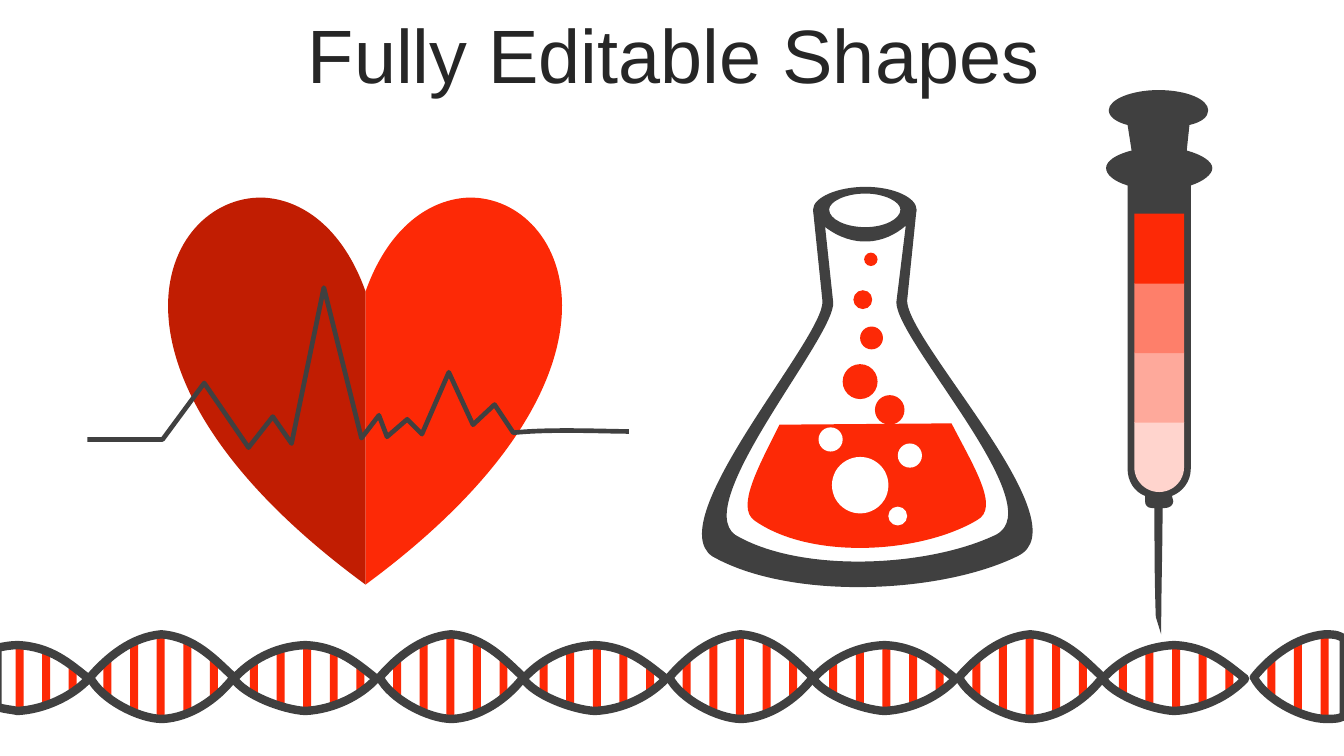
"""Build a slide of editable medical shapes: heart, DNA strand, syringe and flask."""

from dataclasses import dataclass
from typing import NamedTuple

from lxml.etree import SubElement
from pptx import Presentation
from pptx.dml.color import RGBColor
from pptx.enum.shapes import MSO_SHAPE
from pptx.enum.text import MSO_ANCHOR, MSO_AUTO_SIZE, PP_ALIGN
from pptx.oxml.ns import qn
from pptx.shapes.autoshape import Shape
from pptx.shapes.shapetree import GroupShapes, SlideShapes
from pptx.util import Inches, Pt

Shapes = GroupShapes | SlideShapes
Point = tuple[float, float]

SLIDE_WIDTH = Inches(10)
SLIDE_HEIGHT = SLIDE_WIDTH * 9 // 16
COLUMNS = 1000
CELL = SLIDE_WIDTH / COLUMNS
CURVE_STEPS = 16
COMMANDS = {"M": ("a:moveTo", 1), "L": ("a:lnTo", 1), "C": ("a:cubicBezTo", 3), "Z": ("a:close", 0)}


@dataclass(frozen=True)
class Theme:
    ink: str = "404040"
    title: str = "262626"
    red: str = "FD2906"
    dark_red: str = "C11D02"
    white: str = "FFFFFF"
    doses: tuple[str, ...] = ("FD2906", "FE7F6A", "FEA99B", "FFD4CD")
    font: str = "Arial"
    title_size: float = 40.5
    pulse_line: float = 2.5
    strand_line: float = 4.5


class Box(NamedTuple):
    column: float
    row: float
    columns: float
    rows: float


class Circle(NamedTuple):
    column: float
    row: float
    size: float


class Rung(NamedTuple):
    offset: float
    row: float
    rows: float


class Step(NamedTuple):
    command: str
    points: list[Point]


@dataclass(frozen=True)
class Lobe:
    outline: str
    rungs: tuple[Rung, ...]


THEME = Theme()
TITLE_BOX = Box(27, 10, 949, 59)

HEART_LEFT = "M 195 147 C 224 148 255 169 272 217 L 272 435 C 58 278 120 146 195 147 Z"
HEART_RIGHT = "M 349 147 C 320 148 289 169 272 217 L 272 435 C 485 278 423 146 349 147 Z"
PULSE = ("M 65 327 L 121 327 L 152 285 L 185 333 L 203 310 L 217 330 L 241 214 L 269 326 "
         "L 282 309 L 288 325 L 303 312 L 314 323 L 334 277 L 352 316 L 368 301 L 382 322 "
         "C 409 319 451 321 468 321")

RUNG_WIDTH = 6
RUNG_GAP = 19.8
LOBE_PAIRS = 4
PAIR_WIDTH = 215.5
FIRST_WIDE, FIRST_NARROW = 67, 174
LEFT_EDGE, RIGHT_EDGE = -40, 933


def rungs(first: float, spans: list[tuple[float, float]]) -> tuple[Rung, ...]:
    return tuple(Rung(first + i * RUNG_GAP, *span) for i, span in enumerate(spans))


WIDE = Lobe("M 0 504 C 13 489 31 474 53 472 C 78 474 93 491 107 504 "
            "C 94 521 74 534 54 535 C 36 535 8 520 0 504 Z",
            rungs(10, [(491, 28), (477, 51), (472, 61), (477, 55), (490, 28)]))
NARROW = Lobe("M 0 505 C 12 492 30 481 53 480 C 78 481 92 494 106 505 "
              "C 94 518 74 528 53 529 C 36 528 8 517 0 505 Z",
              rungs(12, [(493, 24), (484, 41), (479, 49), (484, 41), (495, 20)]))
LEFT_LOBE = Lobe("M 53 480 C 78 481 92 494 106 505 C 94 518 73 528 53 529 "
                 "C 49 528 44 528 38 526 L 38 482 C 43 481 48 480 53 480 Z", NARROW.rungs[2:])
RIGHT_LOBE = Lobe("M 0 504 C 12 489 31 474 53 472 C 62 472 63 473 67 475 L 67 533 "
                  "C 64 534 64 535 54 535 C 36 535 8 520 0 504 Z", WIDE.rungs[:3])

SYRINGE = (
    "M 862 67 C 842 67 825 74 825 82 C 825 87 831 91 839 93 L 842 112 "
    "C 830 115 823 120 823 125 C 823 130 829 135 839 138 L 839 349 "
    "C 839 358 844 366 852 369 L 852 373 C 852 376 854 378 857 378 L 859 378 "
    "C 859 406 859 431 860 459 L 864 472 C 864 438 865 409 865 378 L 867 378 "
    "C 870 378 873 376 873 373 L 872 369 C 880 366 886 358 886 349 L 886 138 "
    "C 895 135 902 130 902 125 C 902 120 894 115 883 112 L 885 93 "
    "C 894 91 899 87 899 82 C 899 74 883 67 862 67 Z"
)
TOP_DOSE = Box(844, 159, 37, 52)
DOSE_PITCH = 51.7

LIQUID = ("M 580 316 L 708 315 C 725 348 744 378 727 387 C 685 412 603 417 561 387 "
          "C 548 377 564 348 580 316 Z")
FLASK_BODY = (
    "M 674 168 C 658 182 635 185 614 169 L 620 225 C 622 250 514 374 547 398 "
    "C 596 427 691 422 741 398 C 783 377 667 254 667 225 Z "
    "M 605 156 C 637 183 665 171 682 156 L 675 224 C 676 256 807 391 757 414 "
    "C 700 442 588 447 530 414 C 491 387 614 251 612 224 Z"
)
FLASK_RIM = (
    "M 644 144 C 629 144 617 150 617 156 C 617 163 629 169 644 169 "
    "C 658 169 670 163 670 156 C 670 150 658 144 644 144 Z "
    "M 644 139 C 665 139 682 147 682 156 C 682 166 665 174 644 174 "
    "C 623 174 605 166 605 156 C 605 147 623 139 644 139 Z"
)
RISING_BUBBLES = (Circle(651, 294, 22), Circle(627, 271, 26), Circle(640, 243, 17),
                  Circle(635, 216, 14), Circle(643, 188, 10))
LIQUID_BUBBLES = (Circle(619, 340, 42), Circle(668, 330, 18), Circle(609, 318, 18),
                  Circle(661, 377, 14))


def apply(target: object, values: dict[str, object]) -> None:
    for attribute, value in values.items():
        setattr(target, attribute, value)


def paint(shape: Shape, fill: str | None, line: str | None = None, width: float = 0) -> Shape:
    shape.shadow.inherit = False
    for part, color in ((shape.fill, fill), (shape.line.fill, line)):
        if color:
            part.solid()
            part.fore_color.rgb = RGBColor.from_string(color)
        else:
            part.background()
    if line:
        shape.line.width = Pt(width)
    return shape


def read_steps(outline: str, shift: float) -> list[Step]:
    tokens = iter(outline.split())
    return [
        Step(command, [((float(next(tokens)) + shift) * CELL, float(next(tokens)) * CELL)
                       for _ in range(COMMANDS[command][1])])
        for command in tokens
    ]


def bezier(corners: list[Point], share: float) -> Point:
    rest = 1 - share
    weights = (rest**3, 3 * rest**2 * share, 3 * rest * share**2, share**3)
    x, y = (sum(w * v for w, v in zip(weights, axis)) for axis in zip(*corners))
    return x, y


def covered_points(steps: list[Step]) -> list[Point]:
    covered: list[Point] = []
    for command, points in steps:
        if command == "C":
            corners = [covered[-1], *points]
            covered.extend(bezier(corners, i / CURVE_STEPS) for i in range(1, CURVE_STEPS + 1))
        else:
            covered.extend(points)
    return covered


def draw_outline(shapes: Shapes, outline: str, fill: str | None = None,
                 line: str | None = None, width: float = 0, shift: float = 0) -> None:
    steps = read_steps(outline, shift)
    start, *others = covered_points(steps)
    builder = shapes.build_freeform(*start, scale=1.0)
    builder.add_line_segments(others, close=False)
    shape = builder.convert_to_shape()
    geometry = next(shape.element.iter(qn("a:path")))
    for segment in list(geometry):
        geometry.remove(segment)
    for command, points in steps:
        segment = SubElement(geometry, qn(COMMANDS[command][0]))
        for x, y in points:
            SubElement(segment, qn("a:pt"), x=str(round(x - shape.left)), y=str(round(y - shape.top)))
    paint(shape, fill, line, width)


def draw_preset(shapes: Shapes, preset: MSO_SHAPE, box: Box, fill: str) -> Shape:
    return paint(shapes.add_shape(preset, *(round(cells * CELL) for cells in box)), fill)


def draw_circles(shapes: Shapes, circles: tuple[Circle, ...], fill: str) -> None:
    for column, row, size in circles:
        draw_preset(shapes, MSO_SHAPE.OVAL, Box(column, row, size, size), fill)


def draw_title(title: Shape) -> None:
    apply(title, dict(zip(("left", "top", "width", "height"), (round(c * CELL) for c in TITLE_BOX))))
    frame = title.text_frame
    frame.text = "Fully Editable Shapes"
    apply(frame, {"vertical_anchor": MSO_ANCHOR.MIDDLE, "word_wrap": True,
                  "auto_size": MSO_AUTO_SIZE.NONE})
    frame.paragraphs[0].alignment = PP_ALIGN.CENTER
    font = frame.paragraphs[0].runs[0].font
    apply(font, {"name": THEME.font, "size": Pt(THEME.title_size)})
    font.color.rgb = RGBColor.from_string(THEME.title)


def draw_heart(shapes: Shapes) -> None:
    draw_outline(shapes, HEART_LEFT, THEME.dark_red)
    draw_outline(shapes, HEART_RIGHT, THEME.red)
    draw_outline(shapes, PULSE, line=THEME.ink, width=THEME.pulse_line)


def draw_lobe(shapes: Shapes, lobe: Lobe, left: float) -> None:
    for offset, row, rows in lobe.rungs:
        draw_preset(shapes, MSO_SHAPE.RECTANGLE, Box(left + offset, row, RUNG_WIDTH, rows), THEME.red)
    draw_outline(shapes, lobe.outline, line=THEME.ink, width=THEME.strand_line, shift=left)


def draw_strand(shapes: Shapes) -> None:
    for pair in range(LOBE_PAIRS):
        draw_lobe(shapes, WIDE, FIRST_WIDE + pair * PAIR_WIDTH)
        draw_lobe(shapes, NARROW, FIRST_NARROW + pair * PAIR_WIDTH)
    draw_lobe(shapes, LEFT_LOBE, LEFT_EDGE)
    draw_lobe(shapes, RIGHT_LOBE, RIGHT_EDGE)


def draw_syringe(shapes: Shapes) -> None:
    draw_outline(shapes, SYRINGE, THEME.ink)
    for level, color in reversed(list(enumerate(THEME.doses))):
        box = TOP_DOSE._replace(row=TOP_DOSE.row + level * DOSE_PITCH)
        dose = draw_preset(shapes, MSO_SHAPE.ROUND_2_SAME_RECTANGLE, box, color)
        dose.rotation = 180
        dose.adjustments[0] = 0.5 if color == THEME.doses[-1] else 0


def draw_flask(shapes: Shapes) -> None:
    draw_outline(shapes, LIQUID, THEME.red)
    draw_circles(shapes, RISING_BUBBLES, THEME.red)
    draw_outline(shapes, FLASK_BODY, THEME.ink)
    draw_outline(shapes, FLASK_RIM, THEME.ink)
    draw_circles(shapes, LIQUID_BUBBLES, THEME.white)


def main() -> None:
    deck = Presentation()
    apply(deck, {"slide_width": SLIDE_WIDTH, "slide_height": SLIDE_HEIGHT})
    slide = deck.slides.add_slide(deck.slide_layouts.get_by_name("Title Only"))
    draw_title(slide.shapes.title)
    draw_heart(slide.shapes)
    for draw in (draw_strand, draw_syringe, draw_flask):
        draw(slide.shapes.add_group_shape().shapes)
    deck.save("out.pptx")


if __name__ == "__main__":
    main()
